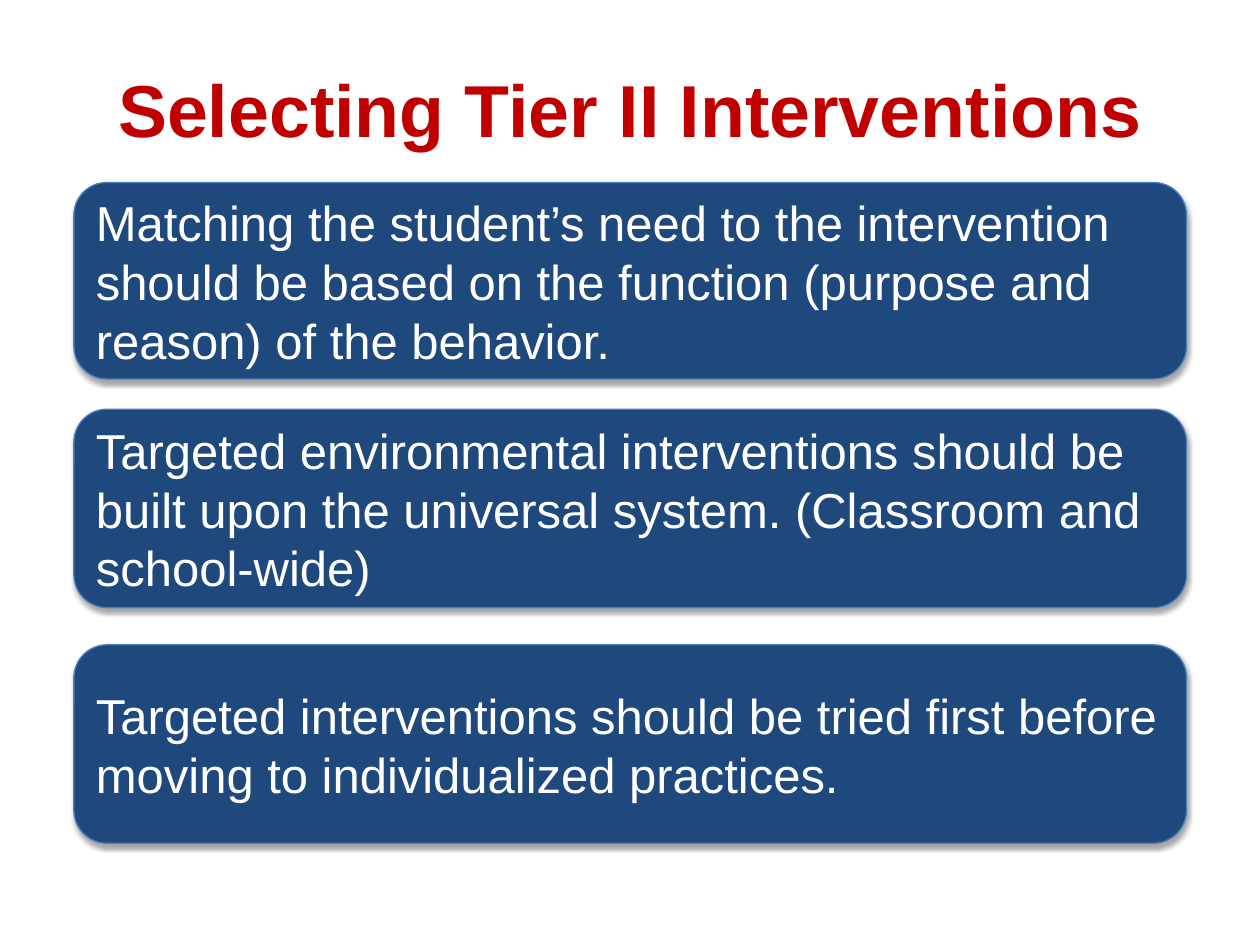
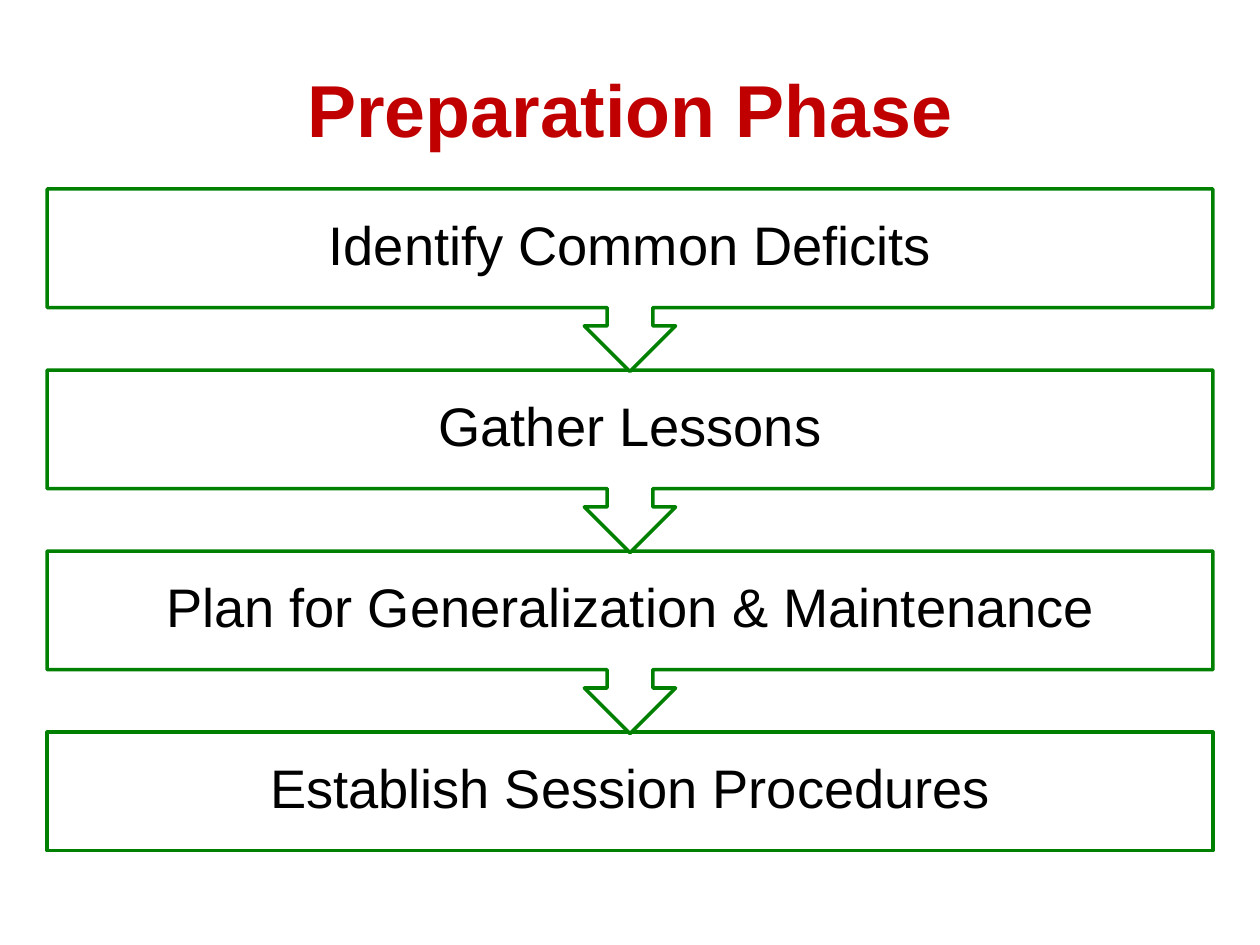
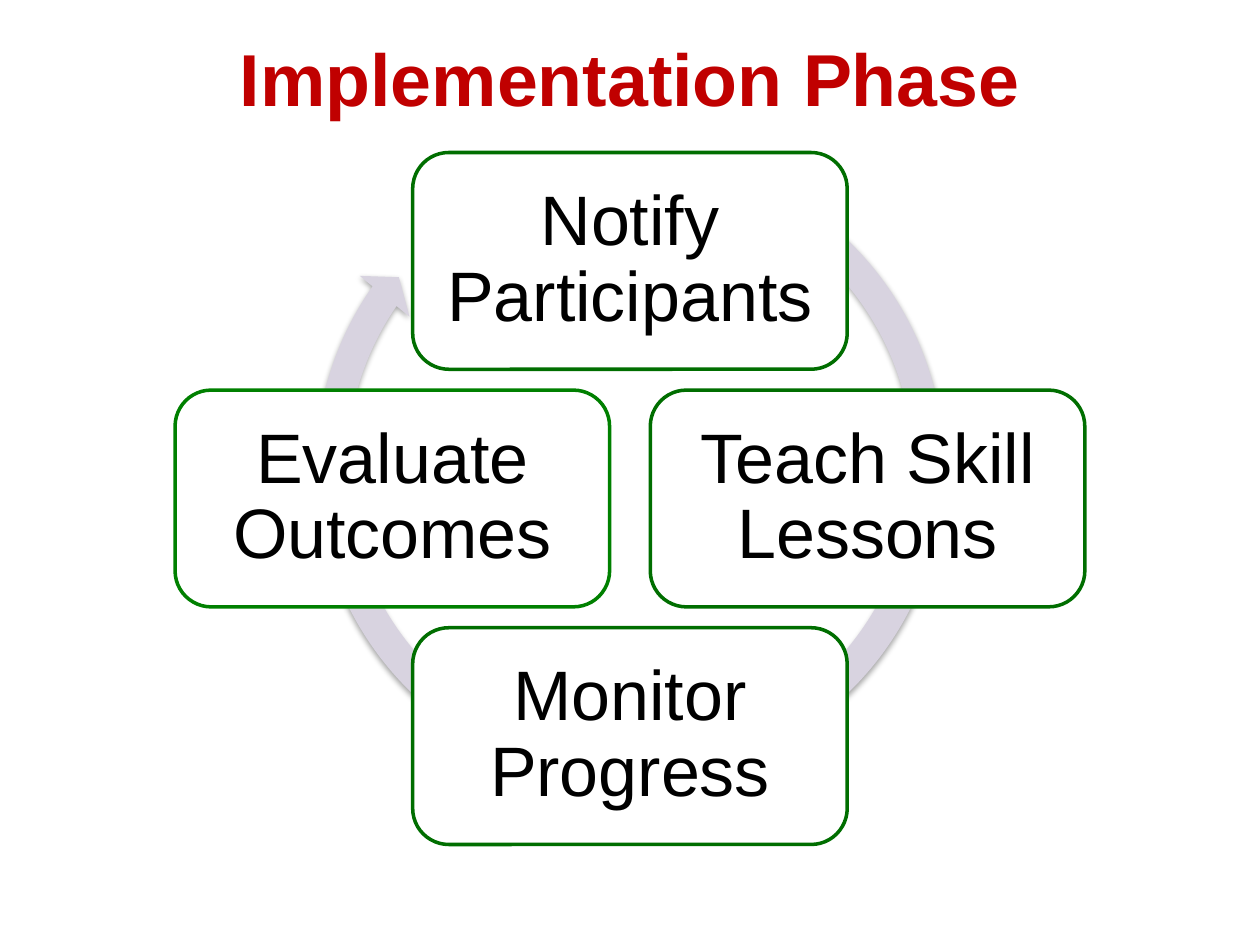
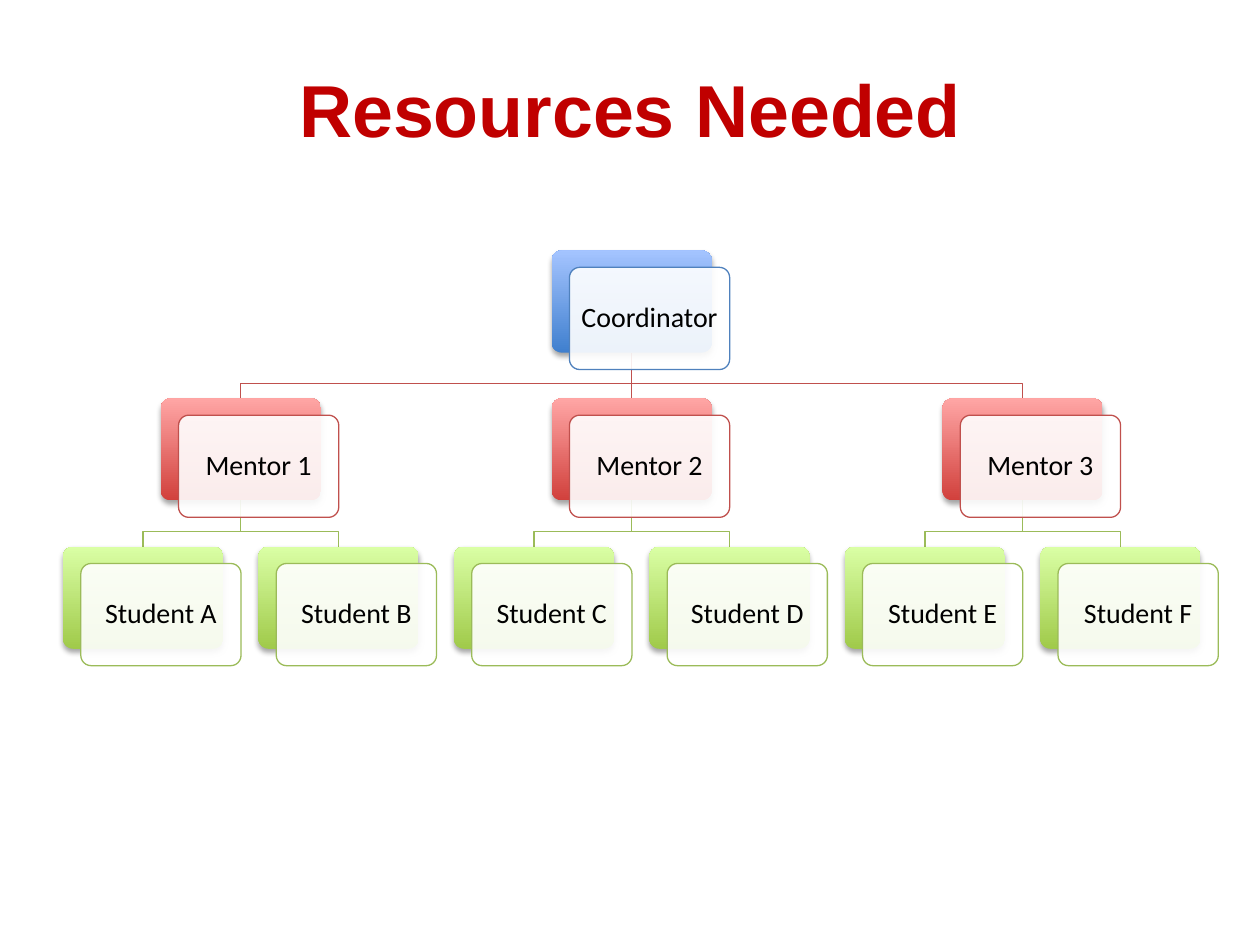
from lxml import etree
from pptx import Presentation, util as u
from pptx.dml.color import RGBColor
from pptx.enum import shapes, text
from pptx.oxml.ns import qn

RED = RGBColor(0xC0, 0x00, 0x00)
NAVY = RGBColor(0x1F, 0x49, 0x7D)
PANEL_EDGE = RGBColor(0x4B, 0x7E, 0xBC)
GREEN = RGBColor(0x00, 0x80, 0x00)
DARK_GREEN = RGBColor(0x00, 0x6E, 0x00)
LILAC = RGBColor(0xD8, 0xD3, 0xE0)
WHITE = RGBColor(0xFF, 0xFF, 0xFF)
BLACK = RGBColor(0x00, 0x00, 0x00)

# Edge, bottom and top colour of each level in the staff tree
COORDINATOR = RGBColor(0x4F, 0x81, 0xBD), RGBColor(0x3F, 0x7F, 0xCE), RGBColor(0xA4, 0xC4, 0xFF)
MENTOR = RGBColor(0xC0, 0x50, 0x4D), RGBColor(0xD1, 0x40, 0x3C), RGBColor(0xFF, 0xA6, 0xA5)
STUDENT = RGBColor(0x9B, 0xBB, 0x59), RGBColor(0xA0, 0xCA, 0x4A), RGBColor(0xDA, 0xFF, 0xA5)

KIND = shapes.MSO_SHAPE


def write(frame, words, size, font="Arial", color=BLACK, bold=False, align=text.PP_ALIGN.CENTER,
          anchor=text.MSO_ANCHOR.MIDDLE, spacing=None, inset=(0, 0)):
    """Fill a text frame; inset is the (horizontal, vertical) margin in cm."""
    frame.word_wrap = True
    frame.vertical_anchor = anchor
    frame.margin_left = frame.margin_right = u.Cm(inset[0])
    frame.margin_top = frame.margin_bottom = u.Cm(inset[1])
    para = frame.paragraphs[0]
    para.alignment = align
    para.line_spacing = spacing
    span = para.add_run()
    span.text = words
    span.font.name = font
    span.font.size = u.Pt(size)
    span.font.bold = bold
    span.font.color.rgb = color


def set_alpha(color_element, percent):
    etree.SubElement(color_element, qn("a:alpha"), val=str(percent * 1000))


def add_soft_shadow(shape):
    effects = shape._element.spPr.find(qn("a:effectLst"))
    shadow = etree.SubElement(effects, qn("a:outerShdw"), blurRad=str(u.Pt(3.1)),
                              dist=str(u.Pt(1.8)), dir="5400000", rotWithShape="0")
    set_alpha(etree.SubElement(shadow, qn("a:srgbClr"), val="000000"), 35)


class Deck:
    """Holds the shared style and the slide being built."""

    def __init__(self):
        self.file = Presentation()
        self.file.slide_width, self.file.slide_height = u.Cm(25.4), u.Cm(19.05)
        self.page = None

    def new_page(self, title, top=1.27):
        self.page = self.file.slides.add_slide(self.file.slide_layouts[6])
        box = self.page.shapes.add_textbox(u.Cm(1.27), u.Cm(top), u.Cm(22.86), u.Cm(1.8))
        write(box.text_frame, title, 42, color=RED, bold=True, anchor=text.MSO_ANCHOR.BOTTOM)

    def shape(self, kind, left, top, width, height, fill=WHITE, line=None, weight=2,
              shadow=False, adjust=()):
        """Add a preset shape; a pair of fill colours makes a gradient from bottom to top."""
        shape = self.page.shapes.add_shape(kind, u.Cm(left), u.Cm(top), u.Cm(width), u.Cm(height))
        for index, value in enumerate(adjust):
            shape.adjustments[index] = value
        if isinstance(fill, RGBColor):
            shape.fill.solid()
            shape.fill.fore_color.rgb = fill
        else:
            shape.fill.gradient()
            shape.fill.gradient_angle = 90
            for stop, color in zip(shape.fill.gradient_stops, fill):
                stop.color.rgb = color
        self.outline(shape, line, weight)
        if shadow:
            add_soft_shadow(shape)
        return shape

    def outline(self, shape, color, weight):
        shape.shadow.inherit = False
        if color is None:
            shape.line.fill.background()
        else:
            shape.line.color.rgb = color
            shape.line.width = u.Pt(weight)

    def elbow(self, start, end, bend, color):
        """Draw a line down from start, across at height bend, and down to end."""
        (x1, y1), (x2, y2) = start, end
        builder = self.page.shapes.build_freeform(u.Cm(x1), u.Cm(y1))
        corners = [(x1, bend), (x2, bend), (x2, y2)]
        builder.add_line_segments([(u.Cm(x), u.Cm(y)) for x, y in corners], close=False)
        branch = builder.convert_to_shape()
        branch.fill.background()
        self.outline(branch, color, 0.75)

    def straight(self, start, end, color):
        points = [u.Cm(value) for value in (*start, *end)]
        link = self.page.shapes.add_connector(shapes.MSO_CONNECTOR.STRAIGHT, *points)
        link.line.color.rgb = color
        link.line.width = u.Pt(0.75)
        etree.SubElement(link._element.spPr, qn("a:effectLst"))
        return link

    def card(self, words, left, top, width, height, style):
        """Add a shaded plate with a translucent label in front; return the plate."""
        edge, *shades = style
        plate = self.shape(KIND.ROUNDED_RECTANGLE, left, top, width, height,
                           fill=shades, shadow=True, adjust=[0.1])
        label = self.shape(KIND.ROUNDED_RECTANGLE, left + 0.36, top + 0.34, width, height,
                           line=edge, weight=0.75, adjust=[0.1])
        set_alpha(label._element.spPr.find(qn("a:solidFill"))[0], 90)
        write(label.text_frame, words, 16, font="Calibri", spacing=0.9, inset=(0.17, 0.17))
        return plate


def build_selecting(deck):
    deck.new_page("Selecting Tier II Interventions")
    panels = [
        (3.68, 3.96, "Matching the student’s need to the intervention should be based on "
                     "the function (purpose and reason) of the behavior."),
        (8.25, 4, "Targeted environmental interventions should be built upon the universal "
                  "system. (Classroom and school-wide)"),
        (13, 4, "Targeted interventions should be tried first before moving to "
                "individualized practices."),
    ]
    for top, height, words in panels:
        panel = deck.shape(KIND.FLOWCHART_ALTERNATE_PROCESS, 1.49, top, 22.43, height,
                           fill=NAVY, line=PANEL_EDGE, weight=0.75, shadow=True)
        write(panel.text_frame, words, 28, color=WHITE, align=text.PP_ALIGN.LEFT,
              inset=(0.25, 0.13))


def build_preparation(deck):
    deck.new_page("Preparation Phase")
    steps = ["Identify Common Deficits", "Gather Lessons",
             "Plan for Generalization & Maintenance", "Establish Session Procedures"]
    last = len(steps) - 1
    for index in range(last, -1, -1):
        kind, height = (KIND.RECTANGLE, 2.39) if index == last else (KIND.DOWN_ARROW_CALLOUT, 3.68)
        step = deck.shape(kind, 0.95, 3.81 + index * 3.65, 23.5, height, line=GREEN)
        write(step.text_frame, steps[index], 31, spacing=0.9, inset=(0.61, 0.61))


def build_implementation(deck):
    deck.new_page("Implementation Phase", top=0.64)
    percents = [4.67, 272.91, 12888.2, 17992.2, 4.85]
    deck.shape(KIND.CIRCULAR_ARROW, 6.03, 2.74, 13.34, 13.34, fill=LILAC, shadow=True,
               adjust=[percent / 100 for percent in percents])
    width, height, radius = 8.76, 4.37, 4.79
    stages = [
        ("Notify Participants", 0, -1, DARK_GREEN),
        ("Teach Skill Lessons", 1, 0, DARK_GREEN),
        ("Monitor Progress", 0, 1, DARK_GREEN),
        ("Evaluate Outcomes", -1, 0, GREEN),
    ]
    for words, across, down, edge in stages:
        stage = deck.shape(KIND.ROUNDED_RECTANGLE, 12.7 + across * radius - width / 2,
                           10.05 + down * radius - height / 2, width, height, line=edge)
        write(stage.text_frame, words, 40, spacing=0.9, inset=(0.43, 0.43))


def build_resources(deck):
    deck.new_page("Resources Needed")
    width, height = 3.23, 2.06
    tops = [5.05, 8.03, 11.02]

    def left(column):
        return 1.27 + column * 3.94

    def ends(parent, child, level):
        """Bottom middle of the parent and top middle of the child on the level below."""
        return ((left(parent) + width / 2, tops[level] + height),
                (left(child) + width / 2, tops[level + 1]))

    mentors = [0.5, 2.5, 4.5]
    middle = mentors[1]
    for mentor in mentors:
        for student in (mentor - 0.5, mentor + 0.5):
            deck.elbow(*ends(mentor, student, 1), tops[2] - 0.3, STUDENT[0])
        if mentor != middle:
            deck.elbow(*ends(middle, mentor, 0), tops[1] - 0.3, MENTOR[0])
    link = deck.straight(*ends(middle, middle, 0), MENTOR[0])

    chief = deck.card("Coordinator", left(middle), tops[0], width, height, COORDINATOR)
    link.begin_connect(chief, 2)
    for number, mentor in enumerate(mentors, 1):
        plate = deck.card(f"Mentor {number}", left(mentor), tops[1], width, height, MENTOR)
        if mentor == middle:
            link.end_connect(plate, 0)
    for column, letter in enumerate("ABCDEF"):
        deck.card(f"Student {letter}", left(column), tops[2], width, height, STUDENT)


def main():
    deck = Deck()
    build_selecting(deck)
    build_preparation(deck)
    build_implementation(deck)
    build_resources(deck)
    deck.file.save("out.pptx")


if __name__ == "__main__":
    main()
